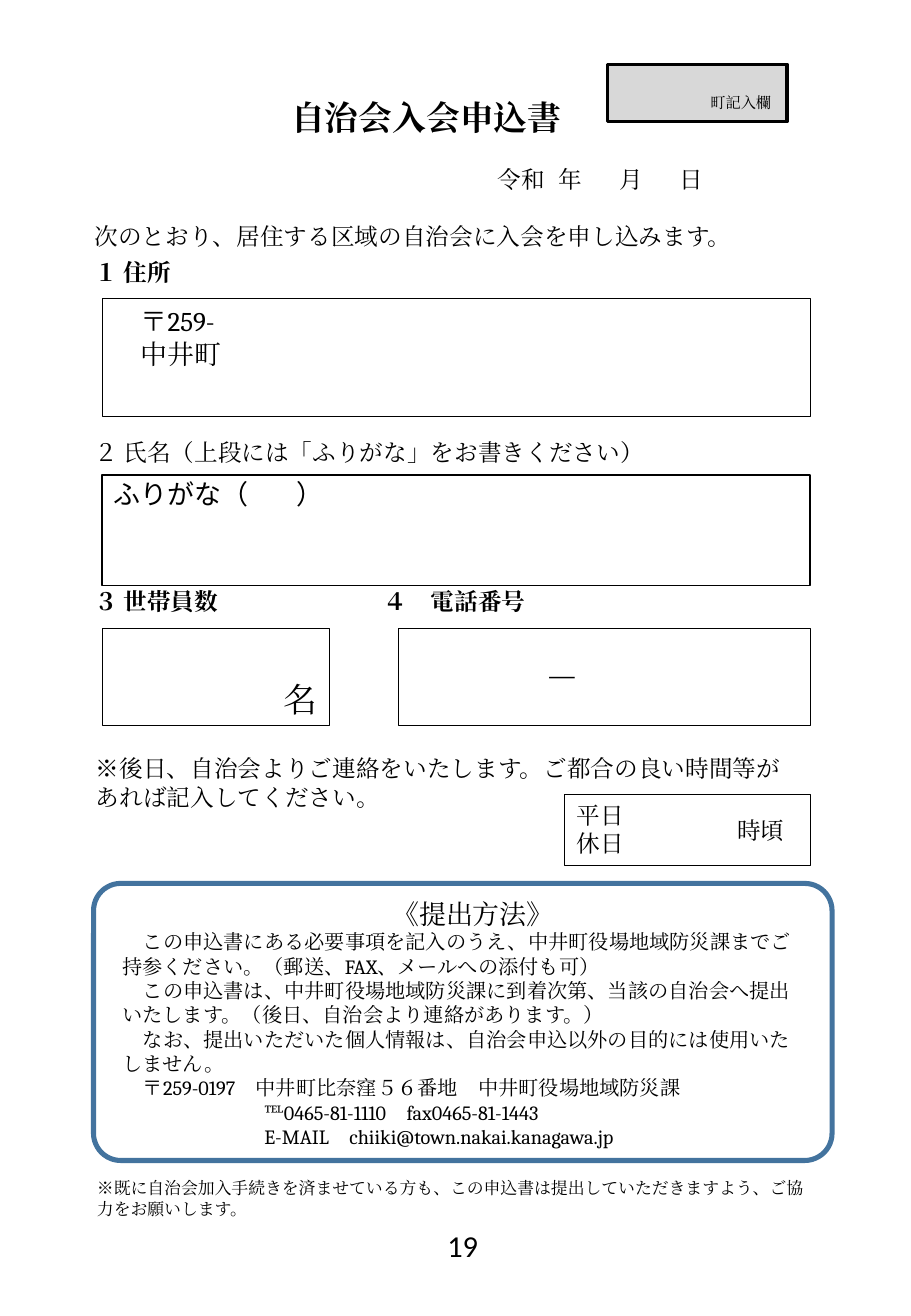
"""Build the one-page application form for joining a neighbourhood association."""
from lxml.etree import SubElement
from pptx import Presentation
from pptx.dml.color import RGBColor
from pptx.enum.shapes import MSO_SHAPE
from pptx.enum.text import MSO_ANCHOR, PP_ALIGN
from pptx.oxml.ns import qn
from pptx.util import Inches, Pt

COLORS = {"ink": "000000", "paper": "FFFFFF", "office": "D8D8D8", "frame": "43739E"}


def write(shape, lines, size, anchor=MSO_ANCHOR.MIDDLE, align=PP_ALIGN.LEFT,
          bold=False, font="Cambria", indent=0, tabs=()):
    """Put lines of text in a shape and format every paragraph and run."""
    frame = shape.text_frame
    frame.text = "\n".join(lines)
    frame.word_wrap = True
    frame.vertical_anchor = anchor
    for para in frame.paragraphs:
        para.alignment = align
        properties = para._p.get_or_add_pPr()
        properties.set("marL", "0")
        properties.set("indent", str(Inches(indent)))
        if tabs:
            tab_list = SubElement(properties, qn("a:tabLst"))
            for stop in tabs:
                SubElement(tab_list, qn("a:tab"), pos=str(Inches(stop)), algn="l")
        for span in para.runs:
            span.font.size = Pt(size)
            span.font.bold = bold
            span.font.color.rgb = RGBColor.from_string(COLORS["ink"])
            span.font.name = font
            SubElement(span._r.get_or_add_rPr(), qn("a:ea"), typeface=font)


def add_box(place, line_width=0.5, fill="paper", line="ink", kind=MSO_SHAPE.RECTANGLE):
    """Add an outlined form field."""
    box = page.shapes.add_shape(kind, *map(Inches, place))
    box.shadow.inherit = False
    box.fill.solid()
    box.fill.fore_color.rgb = RGBColor.from_string(COLORS[fill])
    box.line.color.rgb = RGBColor.from_string(COLORS[line])
    box.line.width = Pt(line_width)
    return box


deck = Presentation()
deck.slide_width, deck.slide_height = Inches(7.5), Inches(10.83)
page = deck.slides.add_slide(deck.slide_layouts[5])

title = page.shapes.title
title.left, title.top, title.width, title.height = map(Inches, (1.51, 0.73, 4, 0.46))
write(title, ["自治会入会申込書"], 20, align=PP_ALIGN.CENTER, bold=True)

office_box = add_box((5, 0.53, 1.48, 0.47), 2, "office")
write(office_box, ["町記入欄"], 9, MSO_ANCHOR.BOTTOM, indent=0.75)
office_box.text_frame.margin_bottom = Inches(0.08)

address_box = add_box((0.84, 2.46, 5.83, 0.97))
write(address_box, ["〒259-", "中井町"], 16, MSO_ANCHOR.TOP, indent=0.22)

name_box = add_box((0.84, 3.91, 5.83, 0.91), 0.75)
write(name_box, ["ふりがな（\t）"], 16, MSO_ANCHOR.TOP, font="Noto Sans CJK JP", tabs=[4.85])
name_box.text_frame.margin_top = Inches(0.02)

household_box = add_box((0.84, 5.17, 1.87, 0.8))
write(household_box, ["名"], 20, MSO_ANCHOR.BOTTOM, PP_ALIGN.RIGHT)

phone_box = add_box((3.28, 5.17, 3.39, 0.8))
write(phone_box, ["－"], 20, indent=1.11)

time_box = add_box((4.65, 6.54, 2.02, 0.58))
write(time_box, ["平日", "休日"], 14, MSO_ANCHOR.TOP)

method_box = add_box((0.77, 7.27, 6.08, 2.28), 3, line="frame", kind=MSO_SHAPE.ROUNDED_RECTANGLE)
method_box.adjustments[0] = 0.098
write(method_box, [
    "《提出方法》",
    "この申込書にある必要事項を記入のうえ、中井町役場地域防災課までご持参ください。（郵送、FAX、メールへの添付も可）",
    "この申込書は、中井町役場地域防災課に到着次第、当該の自治会へ提出いたします。（後日、自治会より連絡があります。）",
    "なお、提出いただいた個人情報は、自治会申込以外の目的には使用いたしません。",
    "〒259-0197　中井町比奈窪５６番地　中井町役場地域防災課",
    "℡0465-81-1110　fax0465-81-1443",
    "E-MAIL　chiiki@town.nakai.kanagawa.jp",
], 12, MSO_ANCHOR.TOP, indent=0.17)
method_frame = method_box.text_frame
method_frame.margin_left = method_frame.margin_right = Inches(0.17)
method_heading = method_frame.paragraphs[0]
method_heading.alignment = PP_ALIGN.CENTER
method_heading.runs[0].font.size = Pt(16)
for contact in method_frame.paragraphs[-2:]:
    contact._p.pPr.set("indent", str(Inches(1.17)))

labels = [
    ((4, 1.3, 2.5, 0.34), "令和\t年\t月\t日", 14, {"tabs": [0.78, 1.36, 1.94]}),
    ((0.68, 1.77, 6, 0.34), "次のとおり、居住する区域の自治会に入会を申し込みます。", 14, {}),
    ((0.68, 2.07, 3, 0.34), "１ 住所", 14, {"bold": True}),
    ((0.68, 3.55, 6, 0.34), "２ 氏名（上段には「ふりがな」をお書きください）", 14, {}),
    ((0.68, 4.78, 2.3, 0.34), "３ 世帯員数", 14, {"bold": True}),
    ((3.06, 4.78, 3, 0.34), "４　電話番号", 14, {"bold": True}),
    ((0.69, 6.14, 5.98, 0.6),
     "※後日、自治会よりご連絡をいたします。ご都合の良い時間等があれば記入してください。", 14, {}),
    ((5.97, 6.66, 0.81, 0.34), "時頃", 14, {}),
    ((0.7, 9.64, 6.01, 0.44),
     "※既に自治会加入手続きを済ませている方も、この申込書は提出していただきますよう、ご協力をお願いします。", 10, {}),
    ((3.43, 10.05, 0.76, 0.4), "19", 18, {"align": PP_ALIGN.CENTER, "font": "Calibri"}),
]
for place, text, size, style in labels:
    label = page.shapes.add_textbox(*map(Inches, place))
    heading, bracket, hint = text.partition("（")
    write(label, [heading], size, **style)
    if hint:
        para = label.text_frame.paragraphs[0]
        write(label, [text], size, **style)
        para.runs[0].text = heading
        para.runs[0].font.bold = True
        span = para.add_run()
        span.text = bracket + hint
        span.font.size = Pt(size)
        span.font.name = "Cambria"
        span.font.color.rgb = RGBColor.from_string(COLORS["ink"])
        SubElement(span._r.get_or_add_rPr(), qn("a:ea"), typeface="Cambria")

deck.save("out.pptx")
